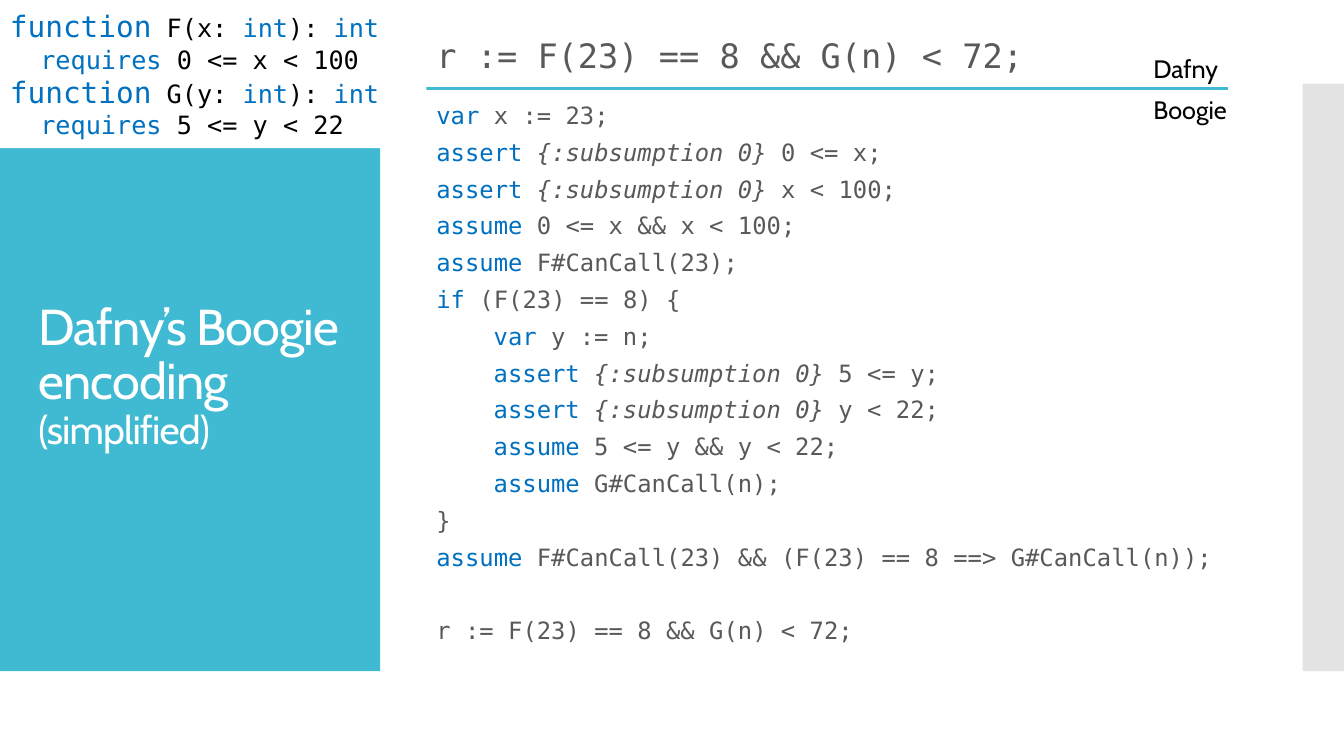
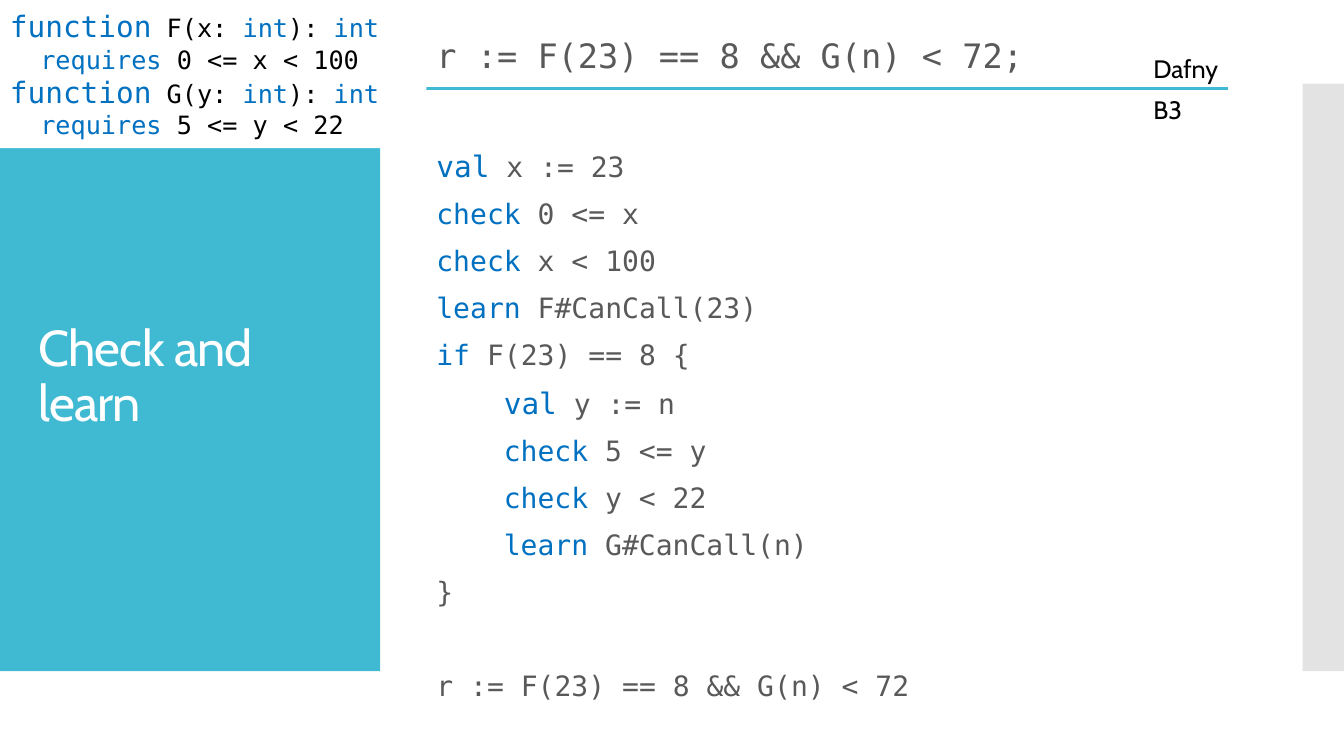
import pptx
import pptx.util
import pptx.dml.color
import pptx.enum.shapes
import pptx.enum.text
import pptx.oxml.ns
import lxml.etree

Inches, Pt = pptx.util.Inches, pptx.util.Pt
MIDDLE = pptx.enum.text.MSO_ANCHOR.MIDDLE
LEFT = pptx.enum.text.PP_ALIGN.LEFT
AUTO = pptx.enum.text.MSO_AUTO_SIZE

TEAL, GRAY, WHITE, BLACK = "40BAD2", "C8C8C8", "FFFFFF", "000000"
KEYWORD, CODE = "0070C0", "595959"
SANS, MONO = "Cabin", "DejaVu Sans Mono"
CHAR_WIDTH = 0.602
LARGE_KEYWORDS = {"function": 21, "val": 21}

STATEMENT = "r := F(23) == 8 && G(n) < 72"
SIGNATURES = [
    "`function` F(x: `int`): `int`",
    "  `requires` 0 <= x < 100",
    "`function` G(y: `int`): `int`",
    "  `requires` 5 <= y < 22",
]
BOOGIE = [
    "`var` x := 23;",
    "`assert` `{:subsumption 0}` 0 <= x;",
    "`assert` `{:subsumption 0}` x < 100;",
    "`assume` 0 <= x && x < 100;",
    "`assume` F#CanCall(23);",
    "`if` (F(23) == 8) {",
    "    `var` y := n;",
    "    `assert` `{:subsumption 0}` 5 <= y;",
    "    `assert` `{:subsumption 0}` y < 22;",
    "    `assume` 5 <= y && y < 22;",
    "    `assume` G#CanCall(n);",
    "}",
    "`assume` F#CanCall(23) && (F(23) == 8 ==> G#CanCall(n));",
    STATEMENT + ";",
]
B3 = [
    "`val` x := 23",
    "`check` 0 <= x",
    "`check` x < 100",
    "`learn` F#CanCall(23)",
    "`if` F(23) == 8 {",
    "    `val` y := n",
    "    `check` 5 <= y",
    "    `check` y < 22",
    "    `learn` G#CanCall(n)",
    "}",
    STATEMENT,
]


def rgb(hex_color):
    """Turn a hex string into a colour."""
    return pptx.dml.color.RGBColor.from_string(hex_color)


def set_font(font, name, size, color):
    """Set the typeface, size and colour of a font."""
    font.name, font.size = name, Pt(size)
    font.color.rgb = rgb(color)


def add_band(s, box, color, alpha=100):
    """Add a plain filled rectangle without an outline."""
    rect = pptx.enum.shapes.MSO_SHAPE.RECTANGLE
    sp = s.shapes.add_shape(rect, *map(Inches, box))
    sp.shadow.inherit = False
    sp.fill.solid()
    sp.fill.fore_color.rgb = rgb(color)
    sp.line.fill.background()
    if alpha < 100:
        clr = sp._element.spPr.find(".//" + pptx.oxml.ns.qn("a:srgbClr"))
        lxml.etree.SubElement(clr, pptx.oxml.ns.qn("a:alpha")).set("val", str(alpha * 1000))
    return sp


def add_text_box(s, box):
    """Add a wrapping text box and return its text frame."""
    tf = s.shapes.add_textbox(*map(Inches, box)).text_frame
    tf.word_wrap = True
    return tf


def write_code(tf, lines, size, color=CODE, spacing=None, before=0, last_before=None):
    """Write code lines, with backquoted keywords and annotations styled."""
    tf.vertical_anchor = MIDDLE
    for i, line in enumerate(lines):
        p = tf.paragraphs[0] if i == 0 else tf.add_paragraph()
        p.alignment = LEFT
        p.line_spacing = spacing
        is_last = i == len(lines) - 1
        p.space_before = Pt(last_before if is_last and last_before else before)
        set_font(p.font, MONO, size, color)
        code = line.lstrip()
        indent = (len(line) - len(code)) * CHAR_WIDTH * size
        if indent:
            p._p.get_or_add_pPr().set("marL", str(Pt(indent)))
        for j, part in enumerate(code.split("`")):
            if not part:
                continue
            r = p.add_run()
            r.text = part
            if j % 2 and part.startswith("{"):
                r.font.italic = True
            elif j % 2:
                set_font(r.font, MONO, LARGE_KEYWORDS.get(part, size), KEYWORD)


def add_title(s, title, subtitle):
    """Place the title in the teal side panel."""
    add_band(s, (0, 0.83, 3.77, 5.83), TEAL)
    sp = s.shapes.title
    sp._element.getparent().append(sp._element)
    sp.left, sp.top, sp.width, sp.height = map(Inches, (0.28, 1.23, 3.22, 5.03))
    tf = sp.text_frame
    tf.word_wrap, tf.auto_size, tf.vertical_anchor = True, AUTO.NONE, MIDDLE
    p = tf.paragraphs[0]
    p.alignment, p.line_spacing = LEFT, 0.9
    for text, size in ((title, 36), (subtitle, 28)):
        if text:
            r = p.add_run()
            r.text = text
            set_font(r.font, SANS, size, WHITE)
            r.font._element.set("spc", "-60")


def add_label(s, text, top):
    """Name the language beside the dividing line."""
    tf = add_text_box(s, (11.34, top, 1.73, 0.4))
    tf.auto_size = AUTO.SHAPE_TO_FIT_TEXT
    p = tf.paragraphs[0]
    p.text = text
    set_font(p.font, SANS, 18, BLACK)


def add_divider(s, left, right, y):
    """Draw the line between source and encoding."""
    straight = pptx.enum.shapes.MSO_CONNECTOR.STRAIGHT
    ln = s.shapes.add_connector(straight, *map(Inches, (left, y, right, y)))
    ln.line.color.rgb = rgb(TEAL)
    ln.line.width = Pt(2.25)
    lxml.etree.SubElement(ln._element.spPr, pptx.oxml.ns.qn("a:effectLst"))


def add_encoding_slide(prs, title, subtitle, language, lines, box, size, spacing, last_before):
    """Build a slide showing a statement and its encoding."""
    s = prs.slides.add_slide(prs.slide_layouts[5])
    add_title(s, title, subtitle)
    add_band(s, (12.92, 0.83, 0.42, 5.83), GRAY, alpha=50)
    write_code(add_text_box(s, box), lines, size, spacing=spacing, before=12, last_before=last_before)
    write_code(add_text_box(s, (4.23, -0.14, 8, 1.42)), [STATEMENT + ";"], 24, spacing=0.9, before=12)
    add_divider(s, 3.95, 12.18, 0.88)
    add_label(s, "Dafny", 0.48)
    add_label(s, language, 0.89)
    write_code(add_band(s, (0, 0, 4.23, 1.47), WHITE).text_frame, SIGNATURES, 18, BLACK)


def main():
    """Build and save the presentation."""
    prs = pptx.Presentation()
    prs.slide_width, prs.slide_height = Inches(13.33), Inches(7.5)
    add_encoding_slide(prs, "Dafny’s Boogie encoding ", "(simplified)", "Boogie", BOOGIE,
                       (4.23, 0.93, 8, 5.6), 17, 0.7, 38)
    add_encoding_slide(prs, "Check and learn", "", "B3", B3,
                       (4.23, 1.29, 8, 5.9), 20, 0.9, 45.5)
    prs.save("out.pptx")


if __name__ == "__main__":
    main()
